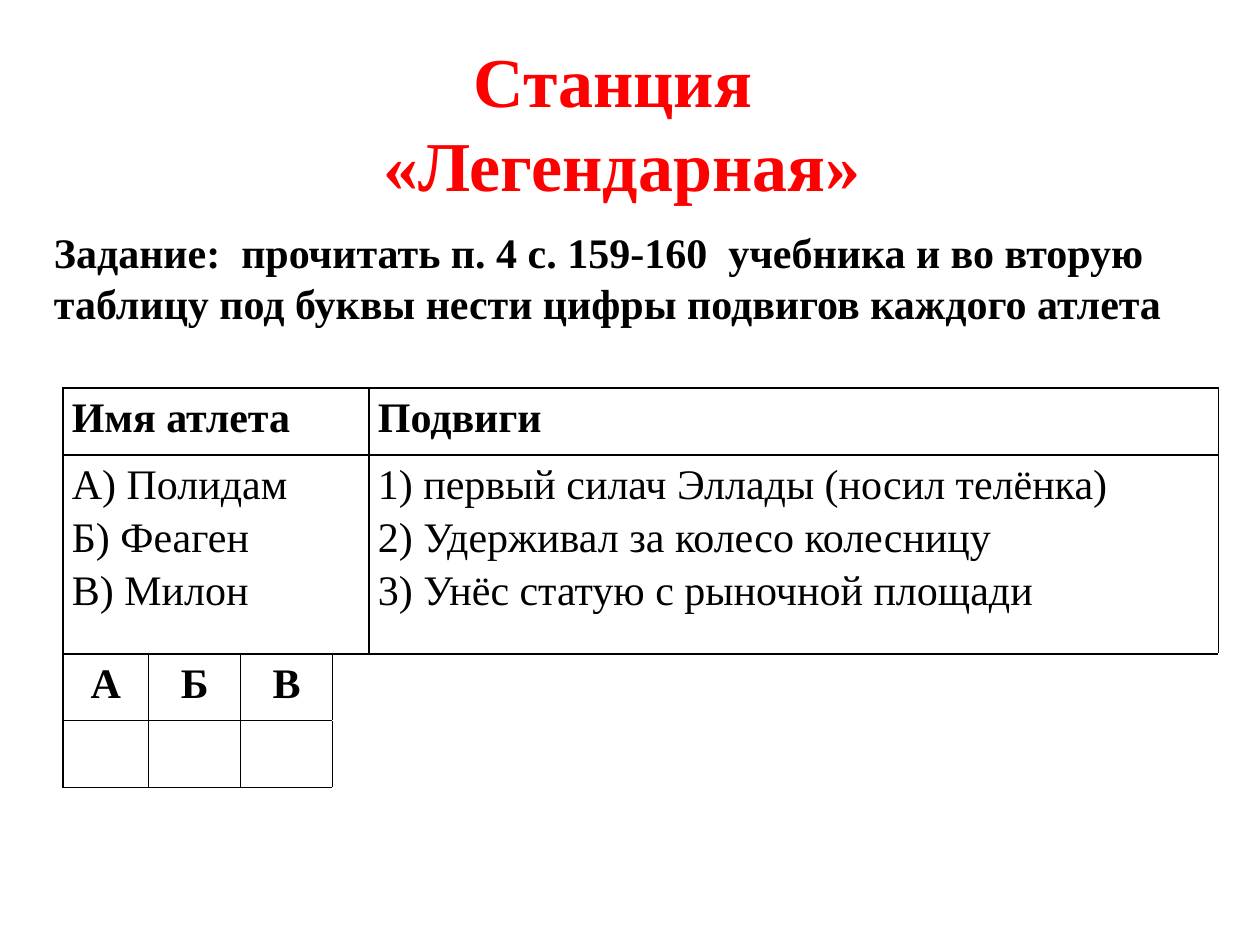
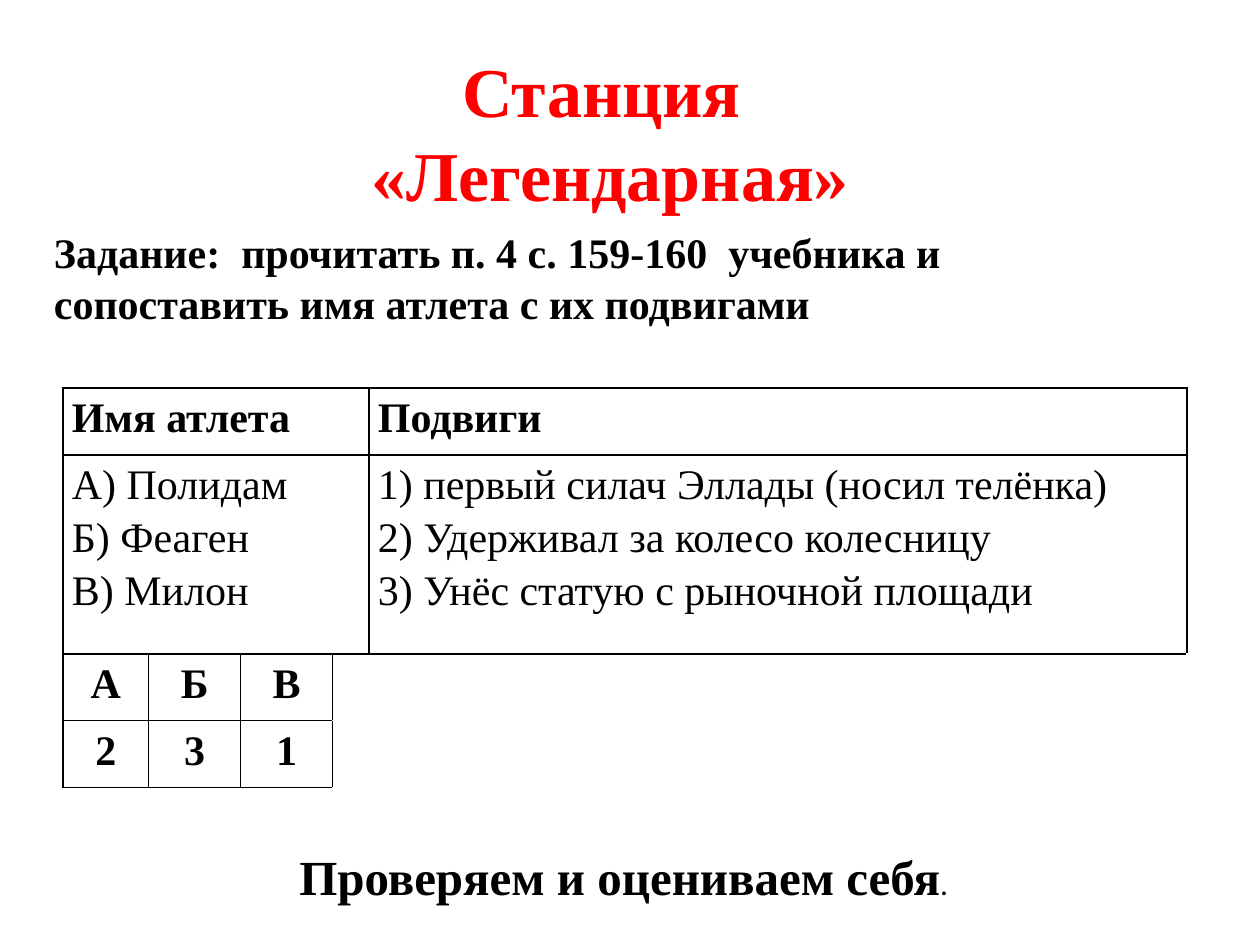
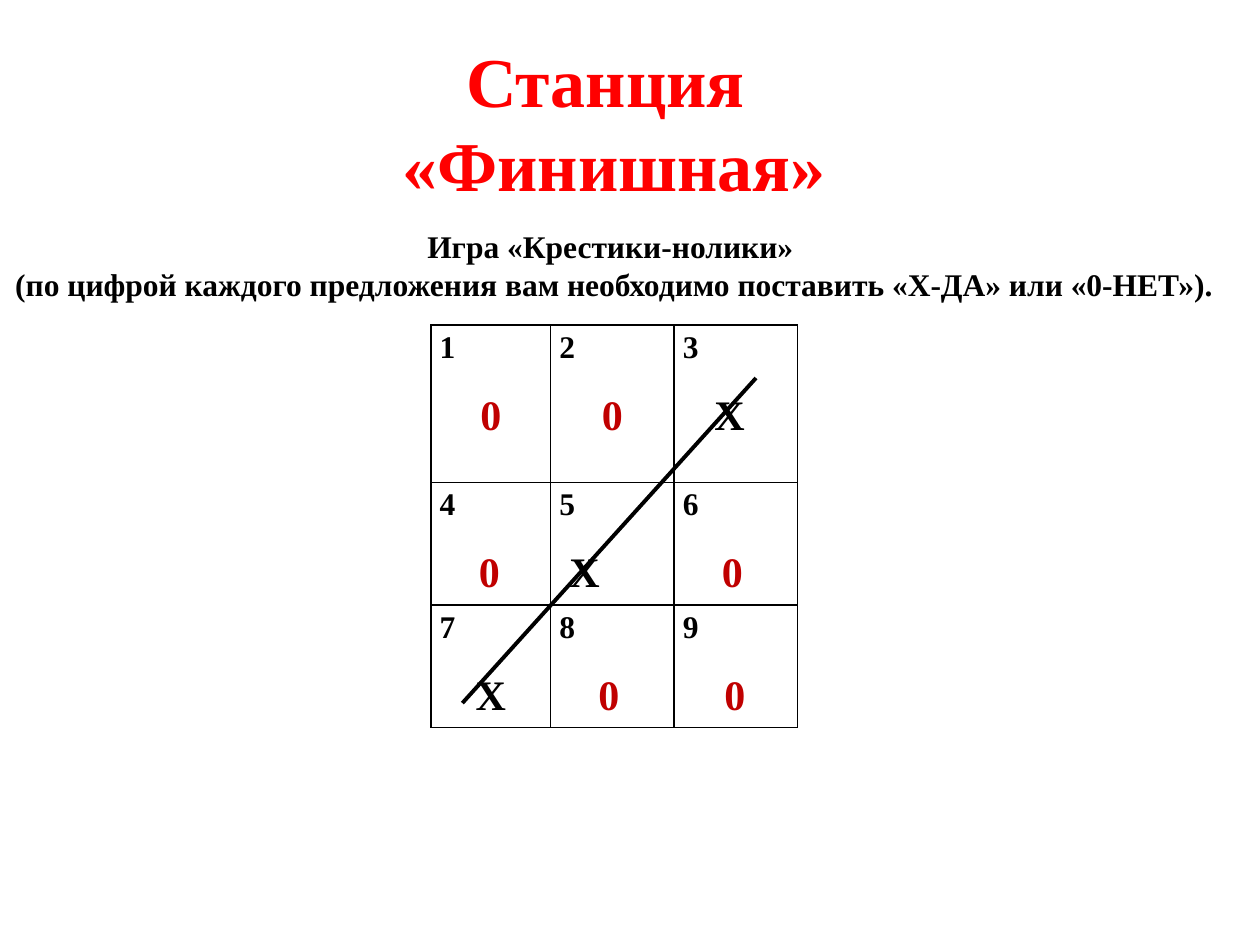
from dataclasses import dataclass, replace

from lxml.etree import SubElement
from pptx import Presentation
from pptx.dml.color import RGBColor
from pptx.enum.shapes import MSO_CONNECTOR as Connector
from pptx.enum.text import MSO_ANCHOR as Anchor
from pptx.enum.text import MSO_AUTO_SIZE as AutoSize
from pptx.enum.text import PP_ALIGN as Align
from pptx.oxml import parse_xml
from pptx.oxml.ns import nsdecls, qn
from pptx.util import Emu, Pt

PX_PER_INCH = 100
EMU_PER_PX = 914400 // PX_PER_INCH
BLACK = "000000"
RED = "FF0000"
DARK_RED = "C00000"
SERIF = "Times New Roman"
ALL_SIDES = "LRTB"


@dataclass(frozen=True)
class Style:
    size: int
    color: str = BLACK
    bold: bool = True
    face: str = SERIF


@dataclass(frozen=True)
class Span:
    text: str
    style: Style


@dataclass(frozen=True)
class Line:
    spans: tuple[Span, ...]
    align: Align = Align.LEFT
    spacing: float | None = None
    after: int = 0
    indent: int = 0


@dataclass(frozen=True)
class Area:
    left: int
    top: int
    width: int
    height: int


@dataclass(frozen=True)
class Mark:
    text: str
    indent: int | None = None


TITLE = Style(40, RED)
TASK = Style(24)
PLAIN = Style(24, bold=False)
GAME = Style(18)
CHECK = Style(28)
STOP = Style(18, bold=False, face="Calibri")

NAMES = ("А) Полидам", "Б) Феаген", "В) Милон")
FEATS = (
    "1) первый силач Эллады (носил телёнка)",
    "2) Удерживал за колесо колесницу",
    "3) Унёс статую с рыночной площади",
)
LETTERS = ("А", "Б", "В")
LETTER_WIDTHS = (68, 73, 73, 29)
MARKS = (
    (Mark("0"), Mark("0"), Mark("Х", 25)),
    (Mark("0", 31), Mark("Х", 8), Mark("0", 31)),
    (Mark("Х"), Mark("0", 31), Mark("0", 33)),
)


def px(length: int) -> Emu:
    return Emu(length * EMU_PER_PX)


def rgb(color: str) -> RGBColor:
    return RGBColor.from_string(color)


def place(area: Area) -> tuple[Emu, ...]:
    return px(area.left), px(area.top), px(area.width), px(area.height)


def lines(texts: tuple[str, ...], style: Style, align: Align = Align.LEFT,
          spacing: float | None = None) -> list[Line]:
    return [Line((Span(text, style),), align, spacing) for text in texts]


def apply_style(font, style: Style) -> None:
    font.name = style.face
    font.size = Pt(style.size)
    font.bold = style.bold
    font.color.rgb = rgb(style.color)


def write(frame, content: list[Line]) -> None:
    for index, line in enumerate(content):
        para = frame.add_paragraph() if index else frame.paragraphs[0]
        para.alignment = line.align
        if line.spacing:
            para.line_spacing = line.spacing
        if line.after:
            para.space_after = Pt(line.after)
        if line.indent:
            para._p.get_or_add_pPr().set("marL", str(px(line.indent)))
        uniform = len({span.style for span in line.spans}) == 1
        if uniform:
            apply_style(para.font, line.spans[0].style)
        for span in line.spans:
            run = para.add_run()
            run.text = span.text
            if not uniform:
                apply_style(run.font, span.style)


def add_text(page, area: Area, content: list[Line], wrap: bool = False,
             anchor: Anchor = Anchor.TOP) -> None:
    frame = page.shapes.add_textbox(*place(area)).text_frame
    frame.word_wrap = wrap
    frame.auto_size = AutoSize.SHAPE_TO_FIT_TEXT
    frame.vertical_anchor = anchor
    write(frame, content)


def add_title(page, area: Area, station: str) -> None:
    add_text(page, area, lines(("Станция ", station), TITLE, Align.CENTER))


def set_borders(cell, sides: str) -> None:
    properties = cell._tc.get_or_add_tcPr()
    for index, side in enumerate(sides):
        properties.insert(index, parse_xml(
            f'<a:ln{side} {nsdecls("a")} w="{Pt(1)}"><a:solidFill>'
            f'<a:srgbClr val="{BLACK}"/></a:solidFill></a:ln{side}>'))


def add_grid(page, left: int, top: int, widths: tuple[int, ...],
             heights: tuple[int, ...]):
    area = Area(left, top, sum(widths), sum(heights))
    table = page.shapes.add_table(len(heights), len(widths), *place(area)).table
    table.first_row = table.horz_banding = False
    for column, width in zip(table.columns, widths):
        column.width = px(width)
    for row, height in zip(table.rows, heights):
        row.height = px(height)
    for cell in table.iter_cells():
        cell.fill.background()
        cell.margin_left = cell.margin_right = px(7)
        cell.margin_top = cell.margin_bottom = 0
    return table


def add_athletes(page, feats_width: int, answers: tuple[str, ...] = ()) -> None:
    table = add_grid(page, 50, 308, (*LETTER_WIDTHS, feats_width), (53, 158, 53, 53))
    for row, (names, feats, style) in enumerate((
            (("Имя атлета",), ("Подвиги",), TASK), (NAMES, FEATS, PLAIN))):
        table.cell(row, 0).merge(table.cell(row, 3))
        for column, texts in ((0, names), (4, feats)):
            write(table.cell(row, column).text_frame, lines(texts, style, spacing=1.15))
        for column in range(5):
            set_borders(table.cell(row, column), ALL_SIDES)
    for row, texts, open_sides in ((2, LETTERS, "LT"), (3, answers, "L")):
        table.cell(row, 3).merge(table.cell(row, 4))
        set_borders(table.cell(row, 3), open_sides)
        for column in range(len(LETTERS)):
            set_borders(table.cell(row, column), ALL_SIDES)
        for column, text in enumerate(texts):
            write(table.cell(row, column).text_frame,
                  lines((text,), TASK, Align.CENTER, 1.15))


def add_game(page) -> None:
    table = add_grid(page, 342, 258, (95, 98, 98), (125, 97, 97))
    for row, marks in enumerate(MARKS):
        for column, mark in enumerate(marks):
            cell = table.cell(row, column)
            number = Line((Span(str(3 * row + column + 1), GAME),), spacing=1.15, after=12)
            color = DARK_RED if mark.text == "0" else BLACK
            answer = replace(
                number,
                spans=(Span(mark.text, Style(24, color)),),
                align=Align.CENTER if mark.indent is None else Align.LEFT,
                indent=mark.indent or 0,
            )
            write(cell.text_frame, [number, answer])
            set_borders(cell, ALL_SIDES)


def add_strike(page, start: tuple[int, int], end: tuple[int, int]) -> None:
    strike = page.shapes.add_connector(Connector.STRAIGHT, *map(px, start + end))
    strike.line.color.rgb = rgb(BLACK)
    strike.line.width = Pt(2.25)
    SubElement(strike._element.spPr, qn("a:effectLst"))


def add_task(page, text: str) -> None:
    add_text(page, Area(33, 175, 900, 91), lines((text,), TASK), wrap=True)


def main() -> None:
    deck = Presentation()
    deck.slide_width, deck.slide_height = px(1000), px(750)
    blank = deck.slide_layouts[6]
    task, answer, finish = (deck.slides.add_slide(blank) for _ in range(3))

    add_title(task, Area(292, 25, 403, 145), "«Легендарная»")
    add_athletes(task, 674)
    add_task(task, "Задание:  прочитать п. 4 с. 159-160  учебника и во вторую "
                   "таблицу под буквы нести цифры подвигов каждого атлета")

    add_title(answer, Area(283, 33, 403, 145), "«Легендарная»")
    add_athletes(answer, 649, ("2", "3", "1"))
    add_task(answer, "Задание:  прочитать п. 4 с. 159-160  учебника и "
                     "сопоставить имя атлета с их подвигами")
    add_text(answer, Area(225, 667, 540, 57), [Line(
        (Span("Проверяем и оцениваем себя", CHECK), Span(".", STOP)), Align.CENTER)])

    add_title(finish, Area(308, 25, 359, 145), "«Финишная»")
    add_text(finish, Area(0, 175, 975, 71), lines((
        "Игра «Крестики-нолики» ",
        "(по цифрой каждого предложения вам необходимо поставить «Х-ДА» или «0-НЕТ»).",
    ), GAME, Align.CENTER), anchor=Anchor.MIDDLE)
    add_game(finish)
    add_strike(finish, (600, 300), (367, 558))

    deck.save("out.pptx")


if __name__ == "__main__":
    main()
